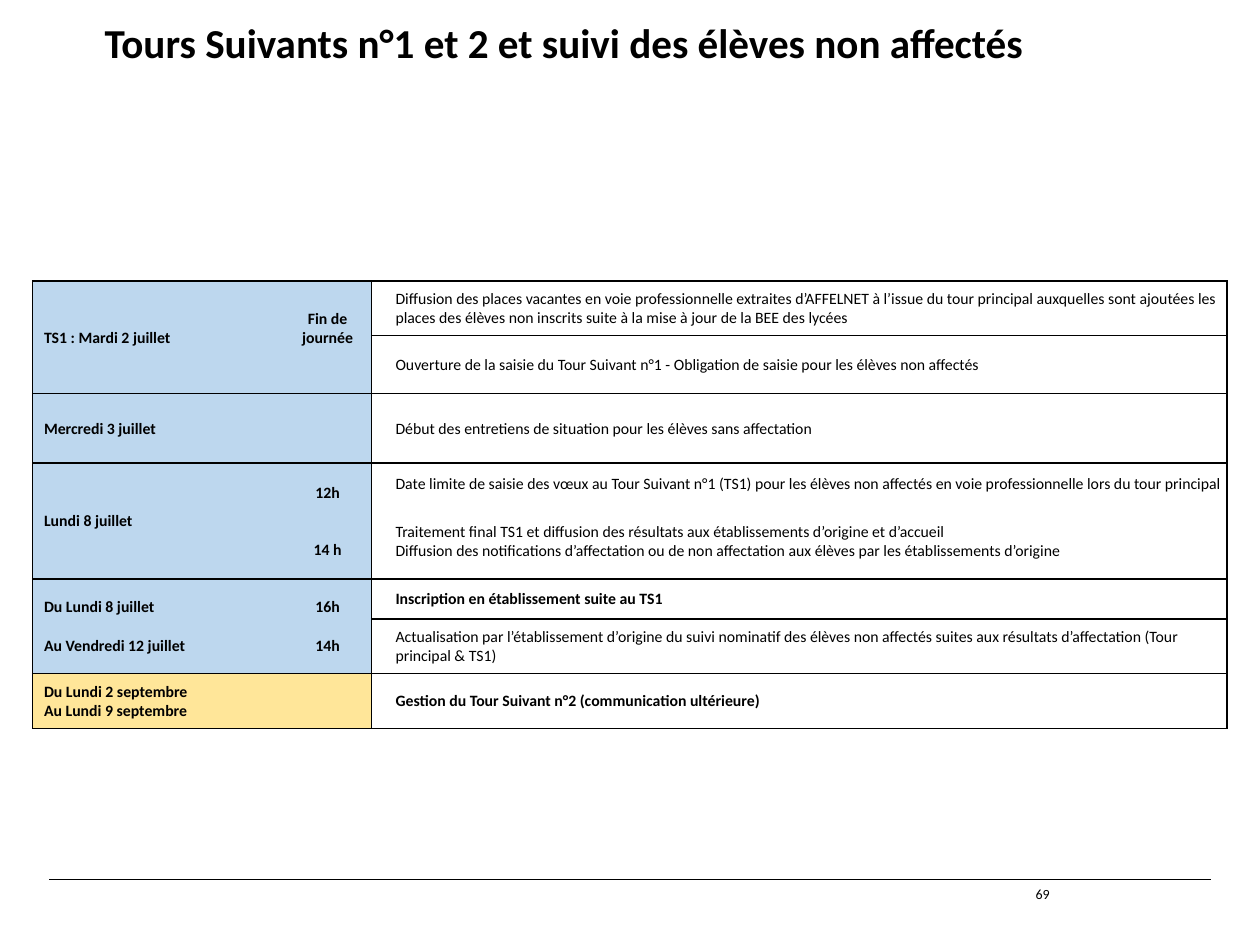
"""Build the slide showing the calendar of the follow-up admission rounds."""
from lxml.etree import SubElement
from pptx import Presentation
from pptx.dml.color import RGBColor
from pptx.enum.shapes import MSO_CONNECTOR
from pptx.enum.text import MSO_ANCHOR, MSO_AUTO_SIZE, PP_ALIGN
from pptx.oxml.ns import qn
from pptx.util import Inches, Pt

BLACK = RGBColor(0x00, 0x00, 0x00)
BLUE = RGBColor(0xBD, 0xD7, 0xEE)
YELLOW = RGBColor(0xFF, 0xE6, 0x99)
FONT = "Calibri"


def write(frame, lines, size, bold=False, align=PP_ALIGN.LEFT, gap=0):
    frame.word_wrap = True
    for index, line in enumerate(lines):
        paragraph = frame.add_paragraph() if index else frame.paragraphs[0]
        paragraph.alignment = align
        paragraph.space_before = Pt(gap if index else 0)
        run = paragraph.add_run()
        run.text = line
        for name, value in {"name": FONT, "size": Pt(size), "bold": bold}.items():
            setattr(run.font, name, value)
        run.font.color.rgb = BLACK


def set_borders(cell, widths):
    properties = cell._tc.get_or_add_tcPr()
    for side in "LRTB":
        width = widths.get(side, 0)
        border = SubElement(properties, qn(f"a:ln{side}"), w=str(Pt(width)))
        if width:
            solid = SubElement(border, qn("a:solidFill"))
            SubElement(solid, qn("a:srgbClr"), val=str(BLACK))
        else:
            SubElement(border, qn("a:noFill"))


prs = Presentation()
prs.slide_width, prs.slide_height = Inches(10), Inches(7.5)
slide = prs.slides.add_slide(prs.slide_layouts[5])

footer_rule = slide.shapes.add_connector(
    MSO_CONNECTOR.STRAIGHT, Inches(0.39), Inches(6.98), Inches(9.61), Inches(6.98))
footer_rule.line.color.rgb = BLACK
footer_rule.line.width = Pt(0.8)
SubElement(footer_rule._element.spPr, qn("a:effectLst"))

title = slide.shapes.title
title.left, title.top = Inches(0.83), Inches(0.18)
title.width, title.height = Inches(9.12), Inches(0.47)
title_format = {
    "margin_left": 0, "margin_right": 0, "margin_top": 0, "margin_bottom": 0,
    "vertical_anchor": MSO_ANCHOR.TOP, "auto_size": MSO_AUTO_SIZE.NONE,
}
for name, value in title_format.items():
    setattr(title.text_frame, name, value)
write(title.text_frame, ["Tours Suivants n°1 et 2 et suivi des élèves non affectés"], 23.5, True)
title.text_frame.paragraphs[0].line_spacing = 0.9

column_widths = [1.99, 0.7, 6.79]
row_heights = [0.43, 0.46, 0.55, 0.32, 0.6, 0.32, 0.43, 0.44]
calendar = slide.shapes.add_table(
    len(row_heights), len(column_widths), Inches(0.26), Inches(2.23),
    Inches(sum(column_widths)), Inches(sum(row_heights))).table
calendar.first_row = calendar.horz_banding = False
for column, width in zip(calendar.columns, column_widths):
    column.width = Inches(width)
for row, height in zip(calendar.rows, row_heights):
    row.height = Inches(height)

# (dates, hours, gap between lines, fill, steps as (lines, bold))
periods = [
    (["TS1 : Mardi 2 juillet"], ["Fin de journée"], 0, BLUE, [
        (["Diffusion des places vacantes en voie professionnelle extraites d’AFFELNET à l’issue du tour "
          "principal auxquelles sont ajoutées les places des élèves non inscrits suite à la mise à jour "
          "de la BEE des lycées"], False),
        (["Ouverture de la saisie du Tour Suivant n°1 - Obligation de saisie pour les élèves "
          "non affectés"], False)]),
    (["Mercredi 3 juillet"], [], 0, BLUE, [
        (["Début des entretiens de situation pour les élèves sans affectation"], False)]),
    (["Lundi 8 juillet"], ["12h", "14 h"], 22, BLUE, [
        (["Date limite de saisie des vœux au Tour Suivant n°1 (TS1) pour les élèves non affectés en voie "
          "professionnelle lors du tour principal"], False),
        (["Traitement final TS1 et diffusion des résultats aux établissements d’origine et d’accueil",
          "Diffusion des notifications d’affectation ou de non affectation aux élèves par les "
          "établissements d’origine"], False)]),
    (["Du Lundi 8 juillet", "Au Vendredi 12 juillet"], ["16h", "14h"], 11, BLUE, [
        (["Inscription en établissement suite au TS1"], True),
        (["Actualisation par l’établissement d’origine du suivi nominatif des élèves non affectés suites "
          "aux résultats d’affectation (Tour principal & TS1)"], False)]),
    (["Du Lundi 2 septembre", "Au Lundi 9 septembre"], [], 0, YELLOW, [
        (["Gestion du Tour Suivant n°2 (communication ultérieure)"], True)]),
]
inner_rules = {1: 0.5, 4: 0, 6: 1}
left_margins = [0.09, 0.01, 0.19]

first = 0
for dates, hours, gap, fill, steps in periods:
    last = first + len(steps) - 1
    for row in range(first, last + 1):
        above = inner_rules.get(row, 1)
        below = inner_rules.get(row + 1, 1)
        outer = {"T": int(row == first), "B": int(row == last)}
        borders = [{"L": 1, **outer}, {"R": 1, **outer}, {"L": 1, "R": 1, "T": above, "B": below}]
        for column, widths in enumerate(borders):
            cell = calendar.cell(row, column)
            set_borders(cell, widths)
            cell_format = {
                "margin_left": Inches(left_margins[column]), "margin_right": Inches(0.01),
                "margin_top": Inches(0.01), "margin_bottom": 0,
                "vertical_anchor": MSO_ANCHOR.MIDDLE,
            }
            for name, value in cell_format.items():
                setattr(cell, name, value)
            if column < 2:
                cell.fill.solid()
                cell.fill.fore_color.rgb = fill
            else:
                cell.fill.background()
        lines, bold = steps[row - first]
        write(calendar.cell(row, 2).text_frame, lines, 9, bold)
    if last > first:
        for column in range(2):
            calendar.cell(first, column).merge(calendar.cell(last, column))
    write(calendar.cell(first, 0).text_frame, dates, 9, True, gap=gap)
    write(calendar.cell(first, 1).text_frame, hours, 9, True, PP_ALIGN.CENTER, gap)
    first = last + 1
calendar.cell(0, 1).margin_bottom = Inches(0.15)

page_number = slide.shapes.add_textbox(Inches(8.12), Inches(6.98), Inches(1.48), Inches(0.52))
write(page_number.text_frame, ["69"], 8)

prs.save("out.pptx")
